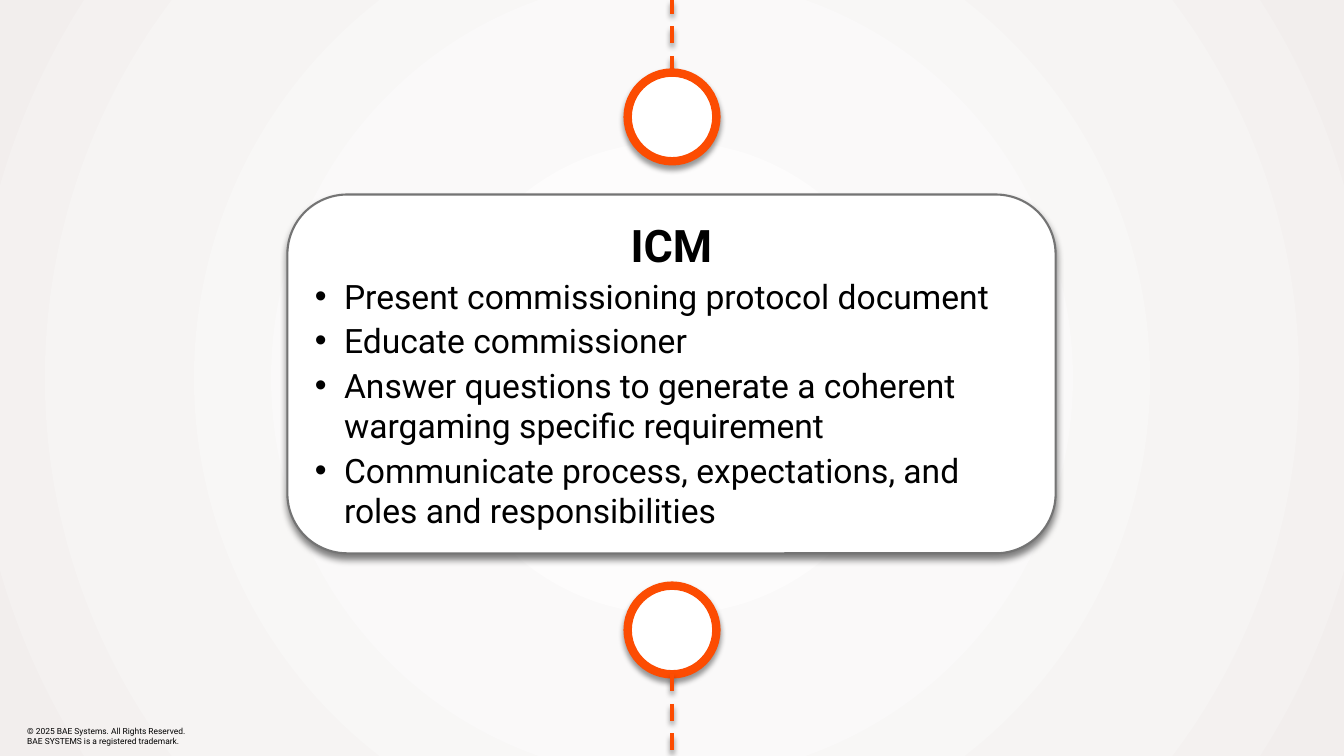
import pptx
import pptx.dml.color
import pptx.enum.dml
import pptx.enum.shapes
import pptx.enum.text
import pptx.oxml
import pptx.oxml.ns
import pptx.util
from pptx.util import Inches

TITLE = "ICM"
DUTIES = [
    "Present commissioning protocol document",
    "Educate commissioner",
    "Answer questions to generate a coherent wargaming specific requirement",
    "Communicate process, expectations, and roles and responsibilities",
]
COPYRIGHT = [
    "© 2025 BAE Systems. All Rights Reserved.",
    "BAE SYSTEMS is a registered trademark.",
]
BACKGROUND_STOPS = [(8, "FFFFFF"), (42, "FAF9F9"), (72, "F6F4F3"), (100, "F2EEED")]

FONT = "Roboto"
ORANGE, GREY, WHITE, BLACK = "FC4C02", "747474", "FFFFFF", "000000"
WIDTH, HEIGHT = 13.33, 7.5
CENTER = WIDTH / 2
DIAMETER = 0.88
TOP_CIRCLE, BOTTOM_CIRCLE = 0.72, 5.81
CARD = (2.85, 1.93, 7.62, 3.56)
BULLET_INDENT = 0.29

NAMESPACE = pptx.oxml.ns.nsdecls("a")
SHAPES = pptx.enum.shapes.MSO_SHAPE
ALIGN = pptx.enum.text.PP_ALIGN
MIDDLE = pptx.enum.text.MSO_ANCHOR.MIDDLE


def color(hex_value):
    return pptx.dml.color.RGBColor.from_string(hex_value)


def paint_background(slide):
    """Fill the slide with a gradient that spreads out from its middle."""
    fill = slide.background.fill
    fill.solid()
    fill.fore_color.rgb = color(WHITE)
    stops = "".join(
        f'<a:gs pos="{position * 1000}"><a:srgbClr val="{value}"/></a:gs>'
        for position, value in BACKGROUND_STOPS
    )
    gradient = pptx.oxml.parse_xml(
        f'<a:gradFill {NAMESPACE} rotWithShape="1"><a:gsLst>{stops}</a:gsLst>'
        '<a:path path="circle"><a:fillToRect l="50000" t="50000" r="50000" b="50000"/>'
        "</a:path></a:gradFill>"
    )
    solid = slide.element.find(".//" + pptx.oxml.ns.qn("a:solidFill"))
    solid.getparent().replace(solid, gradient)


def add_shadow(shape, opacity=40, blur=4, distance=3):
    """Drop a black shadow straight down; blur and distance are in points."""
    shape.element.spPr.append(pptx.oxml.parse_xml(
        f'<a:effectLst {NAMESPACE}><a:outerShdw blurRad="{pptx.util.Pt(blur)}" '
        f'dist="{pptx.util.Pt(distance)}" dir="5400000" rotWithShape="0">'
        f'<a:srgbClr val="{BLACK}"><a:alpha val="{opacity * 1000}"/></a:srgbClr>'
        "</a:outerShdw></a:effectLst>"
    ))


def add_panel(slide, kind, box, line_color, line_width):
    shape = slide.shapes.add_shape(kind, *map(Inches, box))
    shape.fill.solid()
    shape.fill.fore_color.rgb = color(WHITE)
    shape.line.color.rgb = color(line_color)
    shape.line.width = pptx.util.Pt(line_width)
    return shape


def add_circle(slide, top):
    box = (CENTER - DIAMETER / 2, top, DIAMETER, DIAMETER)
    add_shadow(add_panel(slide, SHAPES.OVAL, box, ORANGE, 6))


def add_dashes(slide, start, end):
    line = slide.shapes.add_connector(
        pptx.enum.shapes.MSO_CONNECTOR.STRAIGHT,
        Inches(CENTER), Inches(start), Inches(CENTER), Inches(end))
    line.line.color.rgb = color(ORANGE)
    line.line.width = pptx.util.Pt(3)
    line.line.dash_style = pptx.enum.dml.MSO_LINE.DASH
    add_shadow(line)


def add_bullet(paragraph):
    properties = paragraph._p.get_or_add_pPr()
    properties.set("marL", str(Inches(BULLET_INDENT)))
    properties.set("indent", str(-Inches(BULLET_INDENT)))
    properties.append(pptx.oxml.parse_xml(f'<a:buFont {NAMESPACE} typeface="Arial"/>'))
    properties.append(pptx.oxml.parse_xml(f'<a:buChar {NAMESPACE} char="•"/>'))


def format_text(paragraph, size, bold=False, align=ALIGN.LEFT):
    paragraph.alignment = align
    for run in paragraph.runs:
        run.font.name = FONT
        run.font.size = pptx.util.Pt(size)
        run.font.bold = bold
        run.font.color.rgb = color(BLACK)


def add_card(slide):
    card = add_panel(slide, SHAPES.ROUNDED_RECTANGLE, CARD, GREY, 1.5)
    add_shadow(card, opacity=50, blur=5, distance=4)
    frame = card.text_frame
    frame.word_wrap = True
    frame.vertical_anchor = MIDDLE
    frame.text = "\n".join([TITLE] + DUTIES)
    title, *duties = frame.paragraphs
    format_text(title, 32, bold=True, align=ALIGN.CENTER)
    for duty in duties:
        add_bullet(duty)
        format_text(duty, 24)
    for paragraph in frame.paragraphs:
        paragraph.space_after = pptx.util.Pt(3)


def add_copyright(slide):
    box = slide.shapes.add_textbox(*map(Inches, (0.27, 7.14, 1.79, 0.32)))
    frame = box.text_frame
    frame.word_wrap = True
    frame.vertical_anchor = MIDDLE
    frame.margin_left = frame.margin_right = 0
    frame.margin_top = frame.margin_bottom = 0
    frame.text = "\n".join(COPYRIGHT)
    for paragraph in frame.paragraphs:
        format_text(paragraph, 6)


def main():
    presentation = pptx.Presentation()
    presentation.slide_width = Inches(WIDTH)
    presentation.slide_height = Inches(HEIGHT)
    slide = presentation.slides.add_slide(presentation.slide_layouts[6])
    paint_background(slide)
    add_copyright(slide)
    add_circle(slide, BOTTOM_CIRCLE)
    add_dashes(slide, BOTTOM_CIRCLE + DIAMETER, HEIGHT)
    add_dashes(slide, TOP_CIRCLE, 0)
    add_circle(slide, TOP_CIRCLE)
    add_card(slide)
    presentation.save("out.pptx")


if __name__ == "__main__":
    main()
